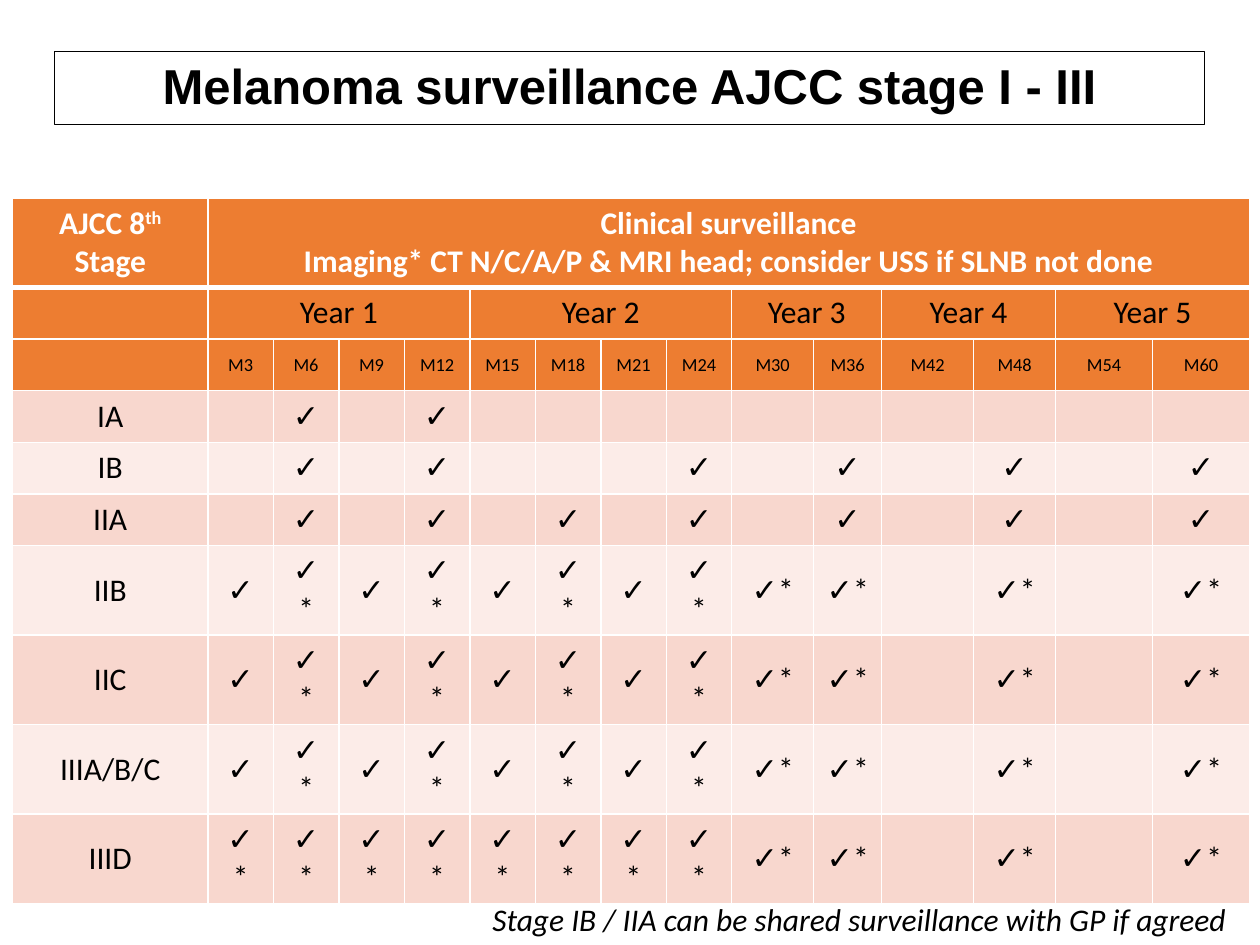
from lxml.etree import SubElement
from pptx import Presentation
from pptx.dml.color import RGBColor
from pptx.enum.text import MSO_ANCHOR as ANCHOR, MSO_AUTO_SIZE as AUTO, PP_ALIGN as ALIGN
from pptx.oxml.ns import qn
from pptx.util import Inches, Pt

COLORS = {"black": "000000", "white": "FFFFFF", "header": "ED7D31",
          "odd": "F8D7CE", "even": "FCECE8"}
MONTHS = [3, 6, 9, 12, 15, 18, 21, 24, 30, 36, 42, 48, 54, 60]
COL_WIDTHS = [1.55] + [0.52] * 8 + [0.65, 0.54, 0.73, 0.65, 0.77, 0.77]
ROW_HEIGHT = 0.41
YEAR_SPANS = [4, 4, 2, 2, 2]
HEADING = "Clinical surveillance\nImaging* CT N/C/A/P & MRI head; consider USS if SLNB not done"
QUARTERLY = {3, 9, 15, 21}
IMAGING = {6, 12, 18, 24, 30, 36, 48, 60}
STAGES = [
    ("IA", {6, 12}, set()),
    ("IB", {6, 12, 24, 36, 48, 60}, set()),
    ("IIA", {6, 12, 18, 24, 36, 48, 60}, set()),
    ("IIB", QUARTERLY, IMAGING),
    ("IIC", QUARTERLY, IMAGING),
    ("IIIA/B/C", QUARTERLY, IMAGING),
    ("IIID", set(), QUARTERLY | IMAGING),
]


def rgb(name):
    return RGBColor.from_string(COLORS[name])


class SlideBuilder:
    def __init__(self, slide, font="Calibri", size=18):
        self.slide, self.font, self.size = slide, font, size

    def format_runs(self, tf, color="black", size=None, font=None, bold=False, italic=False):
        for p in tf.paragraphs:
            for r in p.runs:
                f = r.font
                f.name, f.size = font or self.font, Pt(size or self.size)
                f.bold, f.italic = bold, italic
                f.color.rgb = rgb(color)

    def title(self, text, left, top, width, height):
        sp = self.slide.shapes.title
        sp.left, sp.top, sp.width, sp.height = map(Inches, (left, top, width, height))
        sp.line.color.rgb, sp.line.width = rgb("black"), Pt(0.75)
        tf = sp.text_frame
        tf.text = text
        tf.auto_size, tf.vertical_anchor = AUTO.NONE, ANCHOR.MIDDLE
        tf.paragraphs[0].alignment = ALIGN.CENTER
        tf.paragraphs[0].line_spacing = 0.9
        self.format_runs(tf, size=28, font="Arial", bold=True)

    def table(self, left, top, widths, rows, row_height):
        frame = self.slide.shapes.add_table(rows, len(widths), Inches(left), Inches(top),
                                            Inches(sum(widths)), Inches(rows * row_height))
        table = frame.table
        for col, width in zip(table.columns, widths):
            col.width = Inches(width)
        for row in table.rows:
            row.height = Inches(row_height)
        return table

    def borders(self, cell, bottom=1):
        tcPr = cell._tc.get_or_add_tcPr()
        for side, width in (("L", 1), ("R", 1), ("T", 1), ("B", bottom)):
            ln = SubElement(tcPr, qn(f"a:ln{side}"), w=str(Pt(width)))
            fill = SubElement(ln, qn("a:solidFill"))
            SubElement(fill, qn("a:srgbClr"), val=COLORS["white"])

    def style_cell(self, cell, fill, bottom=1):
        self.borders(cell, bottom)
        cell.fill.solid()
        cell.fill.fore_color.rgb = rgb(fill)
        cell.vertical_anchor = ANCHOR.MIDDLE

    def cell_text(self, cell, text, **style):
        tf = cell.text_frame
        tf.text = text
        for p in tf.paragraphs:
            p.alignment = ALIGN.CENTER
        self.format_runs(tf, **style)

    def note(self, text, left, top, width, height):
        sp = self.slide.shapes.add_textbox(*map(Inches, (left, top, width, height)))
        tf = sp.text_frame
        tf.text = text
        tf.word_wrap, tf.auto_size = False, AUTO.SHAPE_TO_FIT_TEXT
        self.format_runs(tf, italic=True)


def fill_header(b, table):
    corner = table.cell(0, 0)
    b.cell_text(corner, "AJCC 8")
    p = corner.text_frame.paragraphs[0]
    for text in ("th", " Stage"):
        p.add_run().text = text
    b.format_runs(corner.text_frame, color="white", bold=True)
    p.runs[1].font._element.set("baseline", "30000")

    table.cell(0, 1).merge(table.cell(0, len(MONTHS)))
    b.cell_text(table.cell(0, 1), HEADING, color="white", bold=True)

    col = 1
    for year, span in enumerate(YEAR_SPANS, 1):
        table.cell(1, col).merge(table.cell(1, col + span - 1))
        b.cell_text(table.cell(1, col), f"Year {year}")
        col += span
    for col, month in enumerate(MONTHS, 1):
        b.cell_text(table.cell(2, col), f"M{month}", size=10.5)


def fill_stages(b, table):
    for row, (stage, clinical, imaging) in enumerate(STAGES, 3):
        b.cell_text(table.cell(row, 0), stage)
        for col, month in enumerate(MONTHS, 1):
            if month in clinical | imaging:
                b.cell_text(table.cell(row, col), "✓*" if month in imaging else "✓")


def main():
    prs = Presentation()
    prs.slide_width, prs.slide_height = Inches(10), Inches(7.5)
    b = SlideBuilder(prs.slides.add_slide(prs.slide_layouts[5]))
    b.title("Melanoma surveillance AJCC stage I - III", 0.43, 0.41, 9.13, 0.58)

    rows = 3 + len(STAGES)
    table = b.table(0.1, 1.57, COL_WIDTHS, rows, ROW_HEIGHT)
    for row in range(rows):
        fill = "header" if row < 3 else "odd" if row % 2 else "even"
        for col in range(len(COL_WIDTHS)):
            b.style_cell(table.cell(row, col), fill, bottom=1 if row else 3)
    fill_header(b, table)
    fill_stages(b, table)

    b.note("Stage IB / IIA can be shared surveillance with GP if agreed", 3.81, 7.09, 6.09, 0.4)
    prs.save("out.pptx")


if __name__ == "__main__":
    main()
